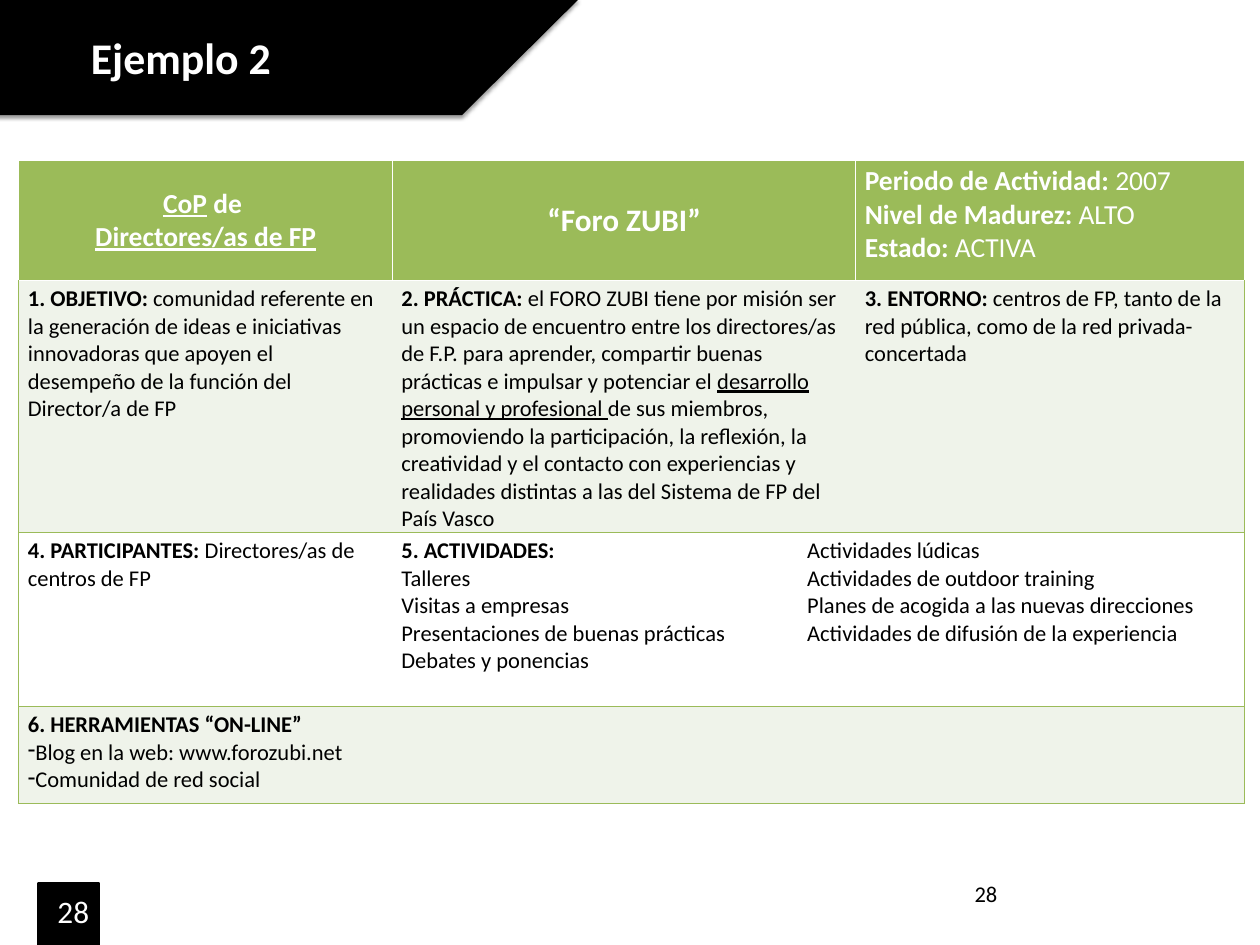
from lxml import etree
from pptx import Presentation
from pptx.dml.color import RGBColor
from pptx.enum.shapes import MSO_SHAPE
from pptx.enum.text import MSO_ANCHOR, MSO_AUTO_SIZE, PP_ALIGN
from pptx.oxml import parse_xml
from pptx.oxml.ns import nsdecls, qn
from pptx.util import Pt

PARALLELOGRAM, RECTANGLE = MSO_SHAPE.PARALLELOGRAM, MSO_SHAPE.RECTANGLE
TOP, MIDDLE = MSO_ANCHOR.TOP, MSO_ANCHOR.MIDDLE
LEFT, CENTER = PP_ALIGN.LEFT, PP_ALIGN.CENTER
NO_AUTOFIT = MSO_AUTO_SIZE.NONE

FONT = "Calibri"
BLACK, WHITE, GREEN, PALE = "000000", "FFFFFF", "9BBB59", "EFF3EA"
COLUMNS = [298.8, 324.7, 46.1, 311]
ROWS = [96.5, 201.5, 139, 77.8]

# Each cell: row, first column, columns spanned, paragraphs of (text, style) runs.
# Styles: b = bold, u = underlined
HEADER = [
    (0, 0, 1, [[("CoP", "bu"), (" de ", "b")], [("Directores/as de FP", "bu")]]),
    (0, 1, 2, [[("“Foro ZUBI”", "b")]]),
    (0, 3, 1, [[("Periodo de Actividad: ", "b"), ("2007", "")],
               [("Nivel de Madurez: ", "b"), ("ALTO", "")],
               [("Estado: ", "b"), ("ACTIVA", "")]]),
]
BODY = [
    (1, 0, 1, [[("1. OBJETIVO: ", "b"),
                ("comunidad referente en la generación de ideas e iniciativas "
                 "innovadoras que apoyen el desempeño de la función del "
                 "Director/a de FP", "")]]),
    (1, 1, 2, [[("2. PRÁCTICA: ", "b"),
                ("el FORO ZUBI tiene por misión ser un espacio de encuentro entre "
                 "los directores/as de F.P. para aprender, compartir buenas "
                 "prácticas e impulsar y potenciar el ", ""),
                ("desarrollo personal y profesional ", "u"),
                ("de sus miembros, promoviendo la participación, la reflexión, la "
                 "creatividad y el contacto con experiencias y realidades "
                 "distintas a las del Sistema de FP del País Vasco", "")]]),
    (1, 3, 1, [[("3. ENTORNO: ", "b"),
                ("centros de FP, tanto de la red pública, como de la red "
                 "privada-concertada", "")]]),
    (2, 0, 1, [[("4. PARTICIPANTES: ", "b"), ("Directores/as de centros de FP", "")]]),
    (2, 1, 1, [[("5. ACTIVIDADES:", "b")], [("Talleres", "")],
               [("Visitas a empresas", "")],
               [("Presentaciones de buenas prácticas", "")],
               [("Debates y ponencias", "")]]),
    (2, 2, 2, [[("Actividades lúdicas", "")],
               [("Actividades de outdoor training", "")],
               [("Planes de acogida a las nuevas direcciones", "")],
               [("Actividades de difusión de la experiencia", "")]]),
    (3, 0, 4, [[("6. HERRAMIENTAS “ON-LINE”", "b")],
               [("Blog en la web: www.forozubi.net", "")],
               [("Comunidad de red social", "")]]),
]


def rgb(color):
    return RGBColor.from_string(color)


def add_run(paragraph, text, size, color, style=""):
    run = paragraph.add_run()
    run.text = text
    run.font.name, run.font.size = FONT, Pt(size)
    run.font.color.rgb = rgb(color)
    run.font.bold, run.font.underline = "b" in style, "u" in style


def add_block(slide, kind, box, color):
    block = slide.shapes.add_shape(kind, *map(Pt, box))
    block.shadow.inherit = False
    block.fill.solid()
    block.fill.fore_color.rgb = rgb(color)
    block.line.fill.background()
    return block


def add_number(slide, box, size, color):
    frame = slide.shapes.add_textbox(*map(Pt, box)).text_frame
    frame.word_wrap = True
    add_run(frame.paragraphs[0], "28", size, color)


def add_dash(paragraph):
    properties = paragraph._p.get_or_add_pPr()
    properties.set("marL", "0")
    properties.set("indent", "0")
    etree.SubElement(properties, qn("a:buChar")).set("char", "-")


def set_borders(cell, colors):
    """Draw the left, right, top and bottom edges; None leaves an edge unlined."""
    properties = cell._tc.get_or_add_tcPr()
    for position, (side, color) in enumerate(zip("LRTB", colors)):
        fill = (f'<a:solidFill><a:srgbClr val="{color}"/></a:solidFill>'
                if color else "<a:noFill/>")
        properties.insert(position, parse_xml(
            f'<a:ln{side} {nsdecls("a")} w="{Pt(1)}">{fill}</a:ln{side}>'))


def add_banner(slide, box):
    left, top, width, height = box
    banner = add_block(slide, PARALLELOGRAM, box, BLACK)
    banner.adjustments[0] = 1.007
    effects = banner._element.spPr.find(qn("a:effectLst"))
    effects.append(parse_xml(
        f'<a:outerShdw {nsdecls("a")} blurRad="{Pt(3.1)}" dist="{Pt(1.6)}" '
        'dir="5400000" rotWithShape="0"><a:srgbClr val="000000">'
        '<a:alpha val="38000"/></a:srgbClr></a:outerShdw>'))

    # Title, brought in front of the banner
    title = slide.shapes.title
    title.left, title.top = Pt(left + 195.1), Pt(top + 21.6)
    title.width, title.height = Pt(374.4), Pt(49.7)
    frame = title.text_frame
    frame.auto_size, frame.vertical_anchor = NO_AUTOFIT, TOP
    frame.paragraphs[0].alignment = LEFT
    add_run(frame.paragraphs[0], "Ejemplo 2", 35, WHITE, "b")
    title._element.getparent().append(title._element)


def fill_cell(cell, paragraphs, size, text_color, fill, alignment):
    cell.fill.solid()
    cell.fill.fore_color.rgb = rgb(fill)
    frame = cell.text_frame
    for position, runs in enumerate(paragraphs):
        paragraph = frame.add_paragraph() if position else frame.paragraphs[0]
        paragraph.alignment = alignment
        for text, style in runs:
            add_run(paragraph, text, size, text_color, style)


def add_community_table(slide, box):
    table = slide.shapes.add_table(len(ROWS), len(COLUMNS), *map(Pt, box)).table
    table.horz_banding = False
    for column, width in zip(table.columns, COLUMNS):
        column.width = Pt(width)
    for row, height in zip(table.rows, ROWS):
        row.height = Pt(height)

    for row, column, span, paragraphs in HEADER + BODY:
        cell = table.cell(row, column)
        last = column + span - 1
        if span > 1:
            cell.merge(table.cell(row, last))
        if row == 0:
            centred = column < 3
            cell.vertical_anchor = MIDDLE if centred else TOP
            fill_cell(cell, paragraphs, 25 if column == 1 else 22, WHITE, GREEN,
                      CENTER if centred else LEFT)
            edges = [WHITE] * 4
        else:
            fill_cell(cell, paragraphs, 18, BLACK, PALE if row % 2 else WHITE, LEFT)
            edges = [GREEN if column == 0 else None, GREEN if last == 3 else None,
                     WHITE if row == 1 else GREEN, GREEN]
        for covered in range(column, last + 1):
            set_borders(table.cell(row, covered), edges)

    # Dashes before the online tools
    for tool in table.cell(3, 0).text_frame.paragraphs[1:]:
        add_dash(tool)


def add_page_tab(slide, box):
    left, top, width, height = box
    tab = add_block(slide, RECTANGLE, box, BLACK)
    tab.line.color.rgb = rgb(BLACK)
    tab.line.width = Pt(2)
    add_number(slide, (left + 7.9, top + 4.3, 235.4, 40.3), 25, WHITE)


def main():
    deck = Presentation()
    deck.slide_width, deck.slide_height = Pt(1008), Pt(756)
    slide = deck.slides.add_slide(deck.slide_layouts[5])
    add_page_tab(slide, (31, 706.3, 48.2, 49.7))
    add_number(slide, (772.6, 700.6, 235.4, 40.3), 18, BLACK)
    add_community_table(slide, (15.1, 128.2, sum(COLUMNS), sum(ROWS)))
    add_banner(slide, (-129.6, -0.7, 592.6, 92.9))
    deck.save("out.pptx")


if __name__ == "__main__":
    main()
